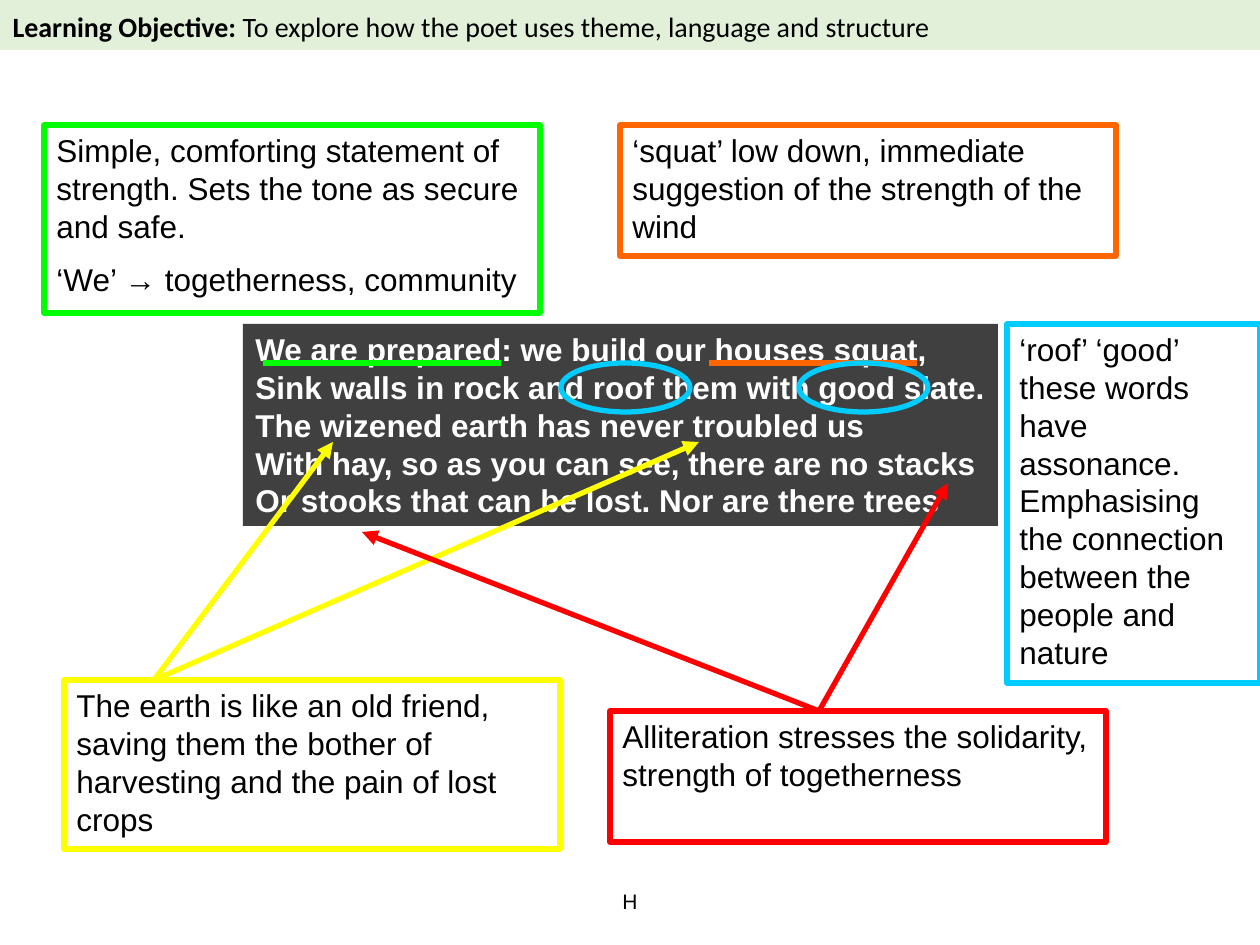
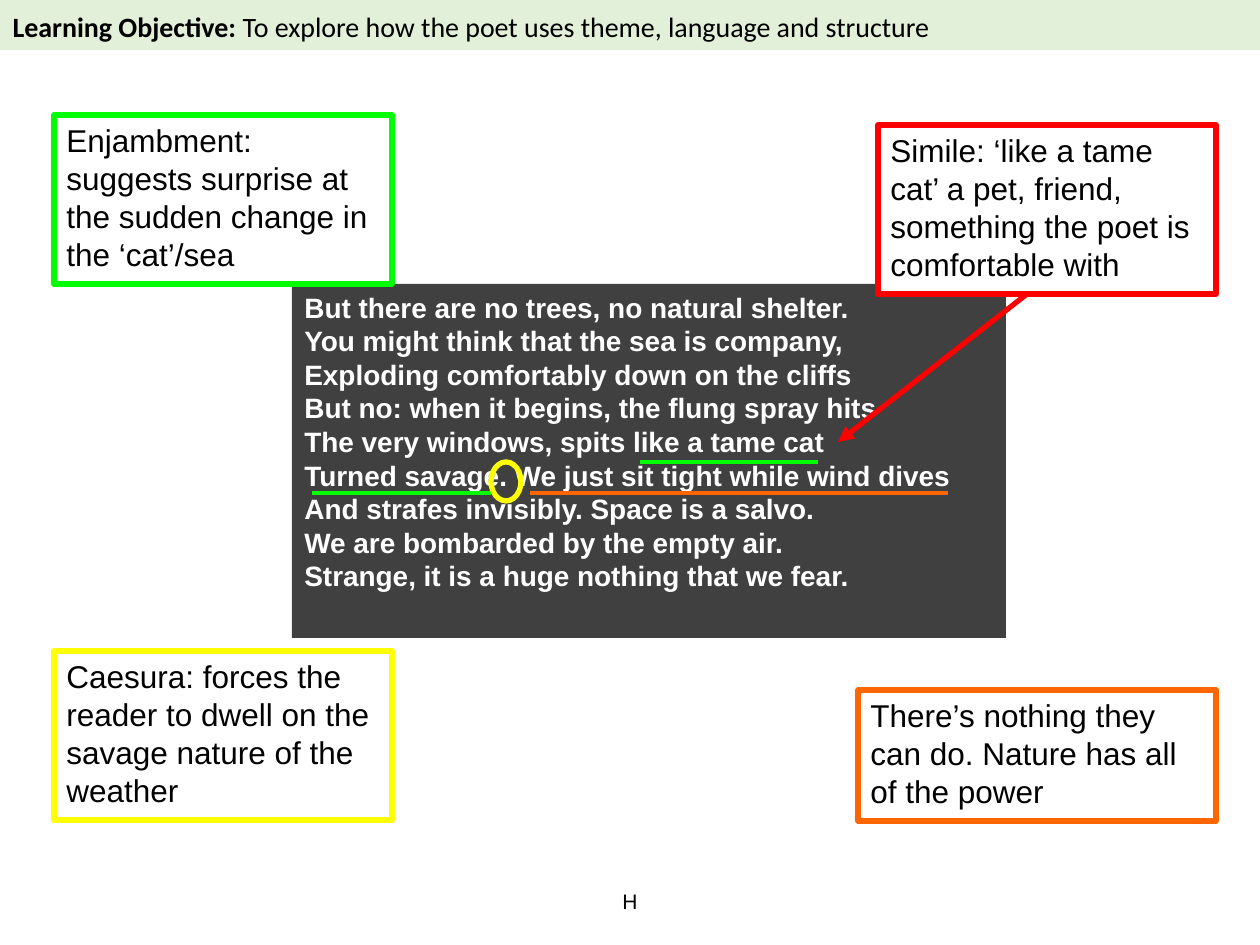
import pptx
import pptx.dml.color
import pptx.enum.shapes
import pptx.enum.text
import pptx.oxml.ns
import pptx.util
from dataclasses import dataclass
from lxml import etree

RGB = pptx.dml.color.RGBColor.from_string
ALIGN = pptx.enum.text.PP_ALIGN
ANCHOR = pptx.enum.text.MSO_ANCHOR
SHAPE = pptx.enum.shapes.MSO_SHAPE
STRAIGHT = pptx.enum.shapes.MSO_CONNECTOR.STRAIGHT
QN = pptx.oxml.ns.qn
EMU_PER_PX = 914400 / 126


@dataclass(frozen=True)
class Theme:
    black: str = "000000"
    white: str = "FFFFFF"
    band: str = "E2F0D9"
    green: str = "00FF00"
    orange: str = "FF6600"
    blue: str = "00CCFF"
    yellow: str = "FFFF00"
    red: str = "FF0000"
    body_font: str = "Arial"
    band_font: str = "Calibri"
    note_size: int = 18
    band_size: int = 16
    footer_size: int = 12
    outline: float = 3


T = Theme()


def px(*lengths):
    """Turn px lengths into EMU."""
    return [pptx.util.Emu(round(length * EMU_PER_PX)) for length in lengths]


def write(frame, *paragraphs, lead="", size=T.note_size, color=T.black, font=T.body_font,
          bold=False, align=ALIGN.LEFT, anchor=ANCHOR.TOP, gap=0, wrap=True):
    """Fill a text frame; lead is a bold opening, gap the points between paragraphs."""
    frame.word_wrap = wrap
    frame.auto_size = pptx.enum.text.MSO_AUTO_SIZE.NONE
    frame.vertical_anchor = anchor
    for index, text in enumerate(paragraphs):
        paragraph = frame.add_paragraph() if index else frame.paragraphs[0]
        paragraph.alignment = align
        if index:
            paragraph.space_before = pptx.util.Pt(gap)
        for words, weight in ((lead, True), (text, bold)):
            if words:
                run = paragraph.add_run()
                run.text = words
                run.font.name = font
                run.font.size = pptx.util.Pt(size)
                run.font.bold = weight
                run.font.color.rgb = RGB(color)


# Lines: colour, start, end, has arrowhead.
# Marks: preset, colour, (left, top, width, height), paragraphs.
stanzas = [
    dict(
        frame=(243, 324, 755, 202), size=18, wrap=False, underline=3,
        verse=["We are prepared: we build our houses squat,",
               "Sink walls in rock and roof them with good slate.",
               "The wizened earth has never troubled us",
               "With hay, so as you can see, there are no stacks",
               "Or stooks that can be lost. Nor are there trees"],
        lines=[(T.green, (263, 363), (501, 363), False),
               (T.orange, (709, 363), (917, 363), False),
               (T.yellow, (154, 680), (333, 442), True),
               (T.yellow, (154, 680), (699, 442), True),
               (T.red, (819, 711), (948, 483), True),
               (T.red, (819, 711), (362, 532), True)],
        marks=[(SHAPE.RECTANGLE, T.green, (44, 125, 496, 188),
                ["Simple, comforting statement of strength. Sets the tone as secure and safe.",
                 "‘We’ → togetherness, community"]),
               (SHAPE.RECTANGLE, T.orange, (620, 125, 496, 131),
                ["‘squat’ low down, immediate suggestion of the strength of the wind"]),
               (SHAPE.RECTANGLE, T.blue, (1007, 324, 253, 359),
                ["‘roof’ ‘good’ these words have assonance. Emphasising the connection "
                 "between the people and nature"]),
               (SHAPE.RECTANGLE, T.yellow, (64, 680, 496, 169),
                ["The earth is like an old friend, saving them the bother of harvesting "
                 "and the pain of lost crops"]),
               (SHAPE.RECTANGLE, T.red, (610, 711, 496, 131),
                ["Alliteration stresses the solidarity, strength of togetherness"]),
               (SHAPE.OVAL, T.blue, (561, 363, 129, 49), []),
               (SHAPE.OVAL, T.blue, (799, 363, 129, 49), [])],
    ),
    dict(
        frame=(292, 284, 714, 354), size=16, wrap=True, underline=2.5,
        verse=["But there are no trees, no natural shelter.",
               "You might think that the sea is company,",
               "Exploding comfortably down on the cliffs",
               "But no: when it begins, the flung spray hits",
               "The very windows, spits like a tame cat",
               "Turned savage. We just sit tight while wind dives",
               "And strafes invisibly. Space is a salvo.",
               "We are bombarded by the empty air.",
               "Strange, it is a huge nothing that we fear."],
        lines=[(T.red, (1027, 294), (838, 442), True),
               (T.green, (640, 462), (818, 462), False),
               (T.green, (312, 493), (491, 493), False),
               (T.orange, (530, 493), (948, 493), False)],
        marks=[(SHAPE.RECTANGLE, T.yellow, (54, 651, 338, 169),
                ["Caesura: forces the reader to dwell on the savage nature of the weather"]),
               (SHAPE.RECTANGLE, T.red, (878, 125, 338, 169),
                ["Simile: ‘like a tame cat’ a pet, friend, something the poet is "
                 "comfortable with"]),
               (SHAPE.RECTANGLE, T.green, (54, 115, 338, 169),
                ["Enjambment: suggests surprise at the sudden change in the ‘cat’/sea"]),
               (SHAPE.RECTANGLE, T.orange, (858, 690, 358, 131),
                ["There’s nothing they can do. Nature has all of the power"]),
               (SHAPE.OVAL, T.yellow, (491, 462, 30, 39), [])],
    ),
]

deck = pptx.Presentation()
deck.slide_width, deck.slide_height = px(1260, 945)
title_only = deck.slide_layouts[5]

for stanza in stanzas:
    slide = deck.slides.add_slide(title_only)
    shapes = slide.shapes

    objective = shapes.title
    objective.left, objective.top, objective.width, objective.height = px(0, 0, 1260, 50)
    objective.fill.solid()
    objective.fill.fore_color.rgb = RGB(T.band)
    objective.text_frame.margin_top, objective.text_frame.margin_bottom = px(10, 0)
    write(objective.text_frame, "To explore how the poet uses theme, language and structure",
          lead="Learning Objective: ", size=T.band_size, font=T.band_font)

    footer = shapes.add_textbox(*px(417, 876, 426, 50))
    write(footer.text_frame, "H", size=T.footer_size, align=ALIGN.CENTER, anchor=ANCHOR.MIDDLE)

    poem = shapes.add_textbox(*px(*stanza["frame"]))
    poem.fill.solid()
    poem.fill.fore_color.rgb = RGB(T.black)
    poem_color = poem.fill._xPr.find(QN("a:solidFill"))[0]
    etree.SubElement(poem_color, QN("a:alpha"), val="75000")
    write(poem.text_frame, *stanza["verse"], size=stanza["size"], color=T.white, bold=True,
          wrap=stanza["wrap"])

    for color, start, end, has_arrow in stanza["lines"]:
        link = shapes.add_connector(STRAIGHT, *px(*start, *end))
        link.line.color.rgb = RGB(color)
        link.line.width = pptx.util.Pt(T.outline if has_arrow else stanza["underline"])
        if has_arrow:
            etree.SubElement(link.line._get_or_add_ln(), QN("a:tailEnd"), type="triangle")
        etree.SubElement(link._element.spPr, QN("a:effectLst"))

    for preset, color, frame, paragraphs in stanza["marks"]:
        mark = shapes.add_shape(preset, *px(*frame))
        mark.shadow.inherit = False
        mark.line.color.rgb = RGB(color)
        mark.line.width = pptx.util.Pt(T.outline)
        if paragraphs:
            mark.fill.solid()
            mark.fill.fore_color.rgb = RGB(T.white)
            write(mark.text_frame, *paragraphs, gap=T.note_size / 2)
        else:
            mark.fill.background()

deck.save("out.pptx")
